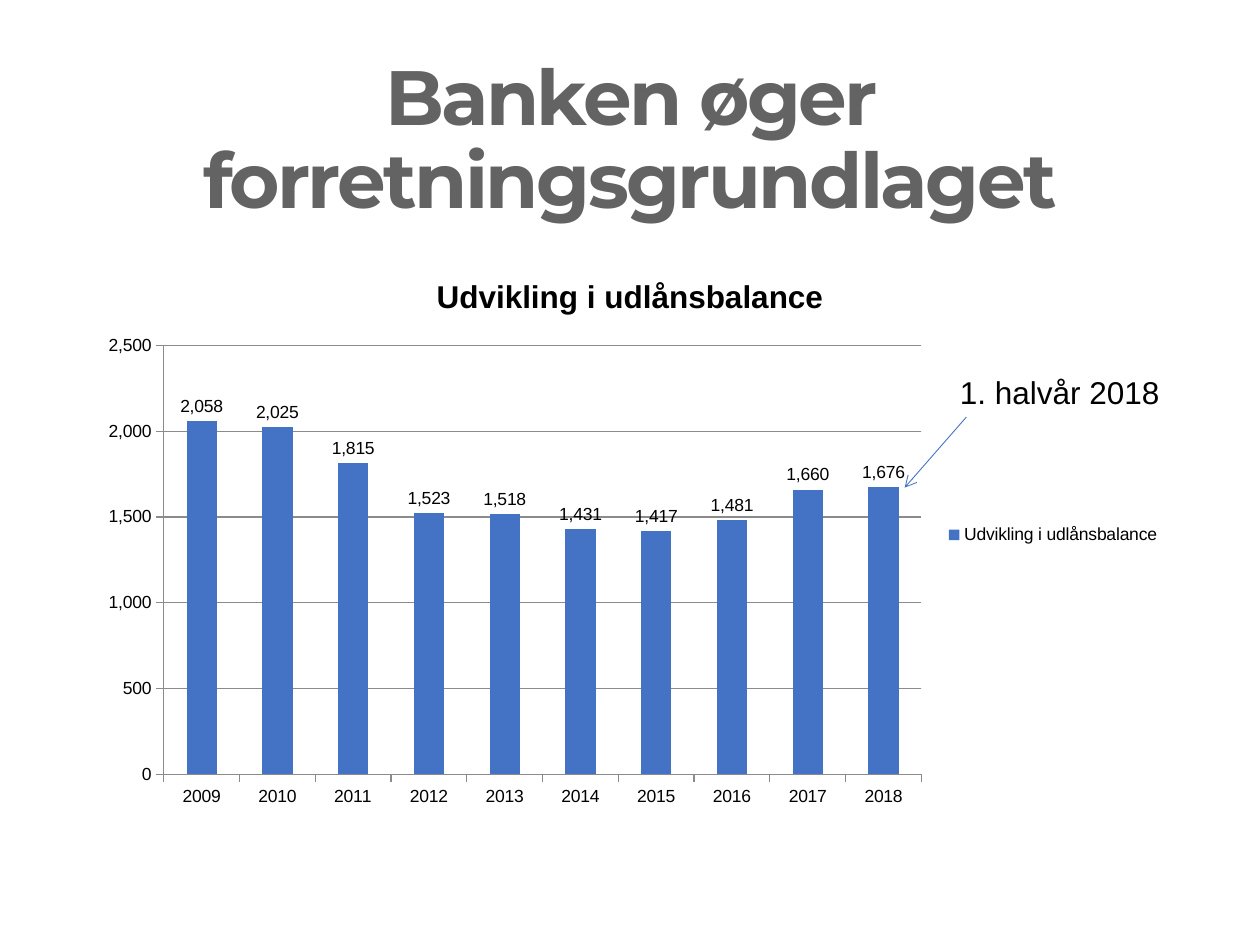
import pptx
import pptx.chart.data
import pptx.dml.color
import pptx.enum.chart
import pptx.enum.shapes
import pptx.enum.text
import pptx.oxml
import pptx.oxml.ns
import pptx.util

Inches = pptx.util.Inches
Pt = pptx.util.Pt
RGBColor = pptx.dml.color.RGBColor
xl = pptx.enum.chart

# Content
HEADING = "Banken øger forretningsgrundlaget"
BALANCE_NAME = "Udvikling i udlånsbalance"
FIRST_YEAR = 2009
BALANCES = [2058, 2025, 1815, 1523, 1518, 1431, 1417, 1481, 1660, 1676]
HALF_YEAR_NOTE = "1. halvår 2018"

BLACK = RGBColor(0x00, 0x00, 0x00)
GREY = RGBColor(0x63, 0x63, 0x63)
AXIS_GREY = RGBColor(0x8B, 0x8B, 0x8B)
BLUE = RGBColor(0x44, 0x72, 0xC4)
LEFT, WIDTH = 0.69, 8.62


def set_font(font, color=BLACK, **values):
    font.color.rgb = color
    for name, value in values.items():
        setattr(font, name, value)


def add_text(slide, text, box, wrap, anchor):
    frame = slide.shapes.add_textbox(*map(Inches, box)).text_frame
    frame.word_wrap = wrap
    frame.vertical_anchor = anchor
    paragraph = frame.paragraphs[0]
    paragraph.add_run().text = text
    return paragraph


def add_element(parent, tag, **attributes):
    element = pptx.oxml.parse_xml(
        f"<{tag} {pptx.oxml.ns.nsdecls('a')}/>")
    for name, value in attributes.items():
        element.set(name, value)
    parent.append(element)


deck = pptx.Presentation()
deck.slide_width, deck.slide_height = Inches(10), Inches(7.5)
slide = deck.slides.add_slide(deck.slide_layouts[6])

# Heading
heading = add_text(slide, HEADING, (LEFT, 0.4, WIDTH, 1.45), True,
                   pptx.enum.text.MSO_ANCHOR.MIDDLE)
heading.alignment = pptx.enum.text.PP_ALIGN.CENTER
heading.line_spacing = 0.9
heading_font = heading.runs[0].font
set_font(heading_font, GREY, name="Montserrat", size=Pt(44), bold=True)
heading.runs[0]._r.get_or_add_rPr().set("spc", "-150")

# Lending balance chart
balance_data = pptx.chart.data.CategoryChartData(number_format="#,##0")
balance_data.categories = [str(FIRST_YEAR + i) for i in range(len(BALANCES))]
balance_data.add_series(BALANCE_NAME, BALANCES)
chart = slide.shapes.add_chart(
    xl.XL_CHART_TYPE.COLUMN_CLUSTERED, Inches(LEFT), Inches(2),
    Inches(WIDTH), Inches(4.49), balance_data).chart
set_font(chart.font, name="Arial", size=Pt(10))

chart.has_title = True
chart.chart_title.include_in_layout = False
chart_title = chart.chart_title.text_frame
chart_title.text = BALANCE_NAME
set_font(chart_title.paragraphs[0].runs[0].font,
         name="Arial", size=Pt(18), bold=True)

chart.has_legend = True
chart.legend.position = xl.XL_LEGEND_POSITION.RIGHT
chart.legend.include_in_layout = False

plot = chart.plots[0]
plot.gap_width = 150
plot.vary_by_categories = False
columns = plot.series[0]
columns.format.fill.solid()
columns.format.fill.fore_color.rgb = BLUE
labels = columns.data_labels
for name, value in {"show_value": True, "number_format": "#,##0",
                    "number_format_is_linked": False,
                    "position": xl.XL_LABEL_POSITION.OUTSIDE_END}.items():
    setattr(labels, name, value)

# Axes
years, amounts = chart.category_axis, chart.value_axis
amounts.has_major_gridlines = True
for name, value in {"minimum_scale": 0, "maximum_scale": 2500,
                    "major_unit": 500}.items():
    setattr(amounts, name, value)
amounts.tick_labels.number_format = "#,##0"
amounts.tick_labels.number_format_is_linked = False
for axis in (years, amounts):
    axis.major_tick_mark = xl.XL_TICK_MARK.OUTSIDE
for ruled in (years, amounts, amounts.major_gridlines):
    ruled.format.line.color.rgb = AXIS_GREY
    ruled.format.line.width = Pt(0.75)

# Note with arrow to the last column
note = add_text(slide, HALF_YEAR_NOTE, (7.52, 2.91, 1.8, 0.4), False,
                pptx.enum.text.MSO_ANCHOR.TOP)
set_font(note.runs[0].font, name="Arial", size=Pt(18))

arrow = slide.shapes.add_connector(
    pptx.enum.shapes.MSO_CONNECTOR.STRAIGHT,
    Inches(7.67), Inches(3.31), Inches(7.18), Inches(3.87))
arrow.line.color.rgb = BLUE
arrow.line.width = Pt(0.5)
add_element(arrow.line._get_or_add_ln(), "a:tailEnd", type="arrow")
add_element(arrow._element.spPr, "a:effectLst")

deck.save("out.pptx")
